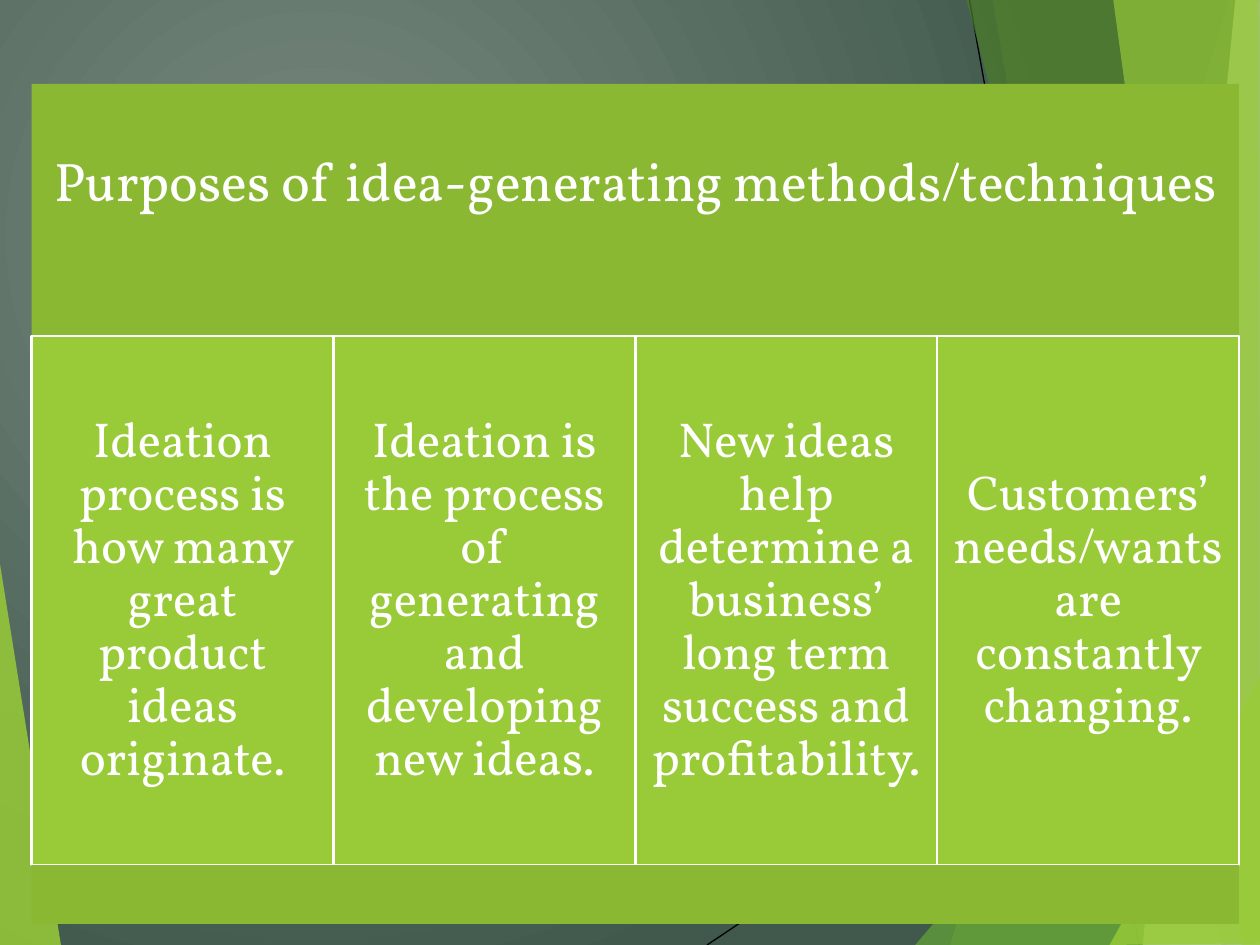
from dataclasses import dataclass

from lxml import etree
from pptx import Presentation
from pptx.dml.color import RGBColor
from pptx.enum.shapes import MSO_CONNECTOR, MSO_SHAPE
from pptx.enum.text import MSO_ANCHOR, MSO_AUTO_SIZE, PP_ALIGN
from pptx.oxml.ns import qn
from pptx.util import Pt

RECT = MSO_SHAPE.RECTANGLE
LINE = MSO_CONNECTOR.STRAIGHT
MIDDLE = MSO_ANCHOR.MIDDLE
CENTER = PP_ALIGN.CENTER
NO_FIT = MSO_AUTO_SIZE.NONE


@dataclass(frozen=True)
class Theme:
    font: str = "Vollkorn"
    head: float = 31
    body: float = 28
    white: str = "FFFFFF"
    black: str = "000000"
    lime: str = "99CB38"
    olive: str = "8BB833"
    leaf: str = "63A537"
    moss: str = "4A7C29"
    pale: str = "C2E088"
    glow: str = "798980"
    dusk: str = "40594C"


@dataclass(frozen=True)
class Box:
    left: float
    top: float
    width: float
    height: float


@dataclass(frozen=True)
class Facet:
    color: str
    alpha: int  # opacity in percent
    points: tuple


THEME = Theme()

# Panel layout
LEFT, WIDTH = 18, 690
HEAD = Box(LEFT, 48, WIDTH, 144)
BODY = Box(LEFT, 192, WIDTH, 302.4)
FOOT = Box(LEFT, 494.4, WIDTH, 33.6)

TITLE = "Purposes of idea-generating methods/techniques"
CARDS = (
    "Ideation process is how many great product ideas originate.",
    "Ideation is the process of generating and developing new ideas.",
    "New ideas help determine a business’ long term success and profitability.",
    "Customers’ needs/wants are constantly changing.",
)

# Backdrop, from back to front
RAYS = (((404, 540), (720, 329)), ((554, 0), (651, 540)))
FACETS = (
    Facet(THEME.lime, 85, ((-1, 316), (35, 541), (-1, 540))),
    Facet(THEME.lime, 30, ((702, 0), (543, 540), (721, 541), (721, 1))),
    Facet(THEME.lime, 20, ((567, -1), (662, 540), (721, 540), (721, -1))),
    Facet(THEME.leaf, 72, ((523, 540), (720, 309), (721, 540))),
    Facet(THEME.moss, 70, ((552, -1), (698, 540), (721, 539), (721, -1))),
    Facet(THEME.pale, 70, ((706, -1), (653, 540), (721, 540), (720, -1))),
    Facet(THEME.lime, 65, ((636, -1), (710, 540), (720, 540), (719, -1))),
    Facet(THEME.lime, 80, ((634, 540), (721, 385), (721, 539))),
)


def rgb(color: str) -> RGBColor:
    return RGBColor.from_string(color)


def paint(shape, color: str) -> None:
    shape.fill.solid()
    shape.fill.fore_color.rgb = rgb(color)


def shade(slide) -> None:
    """Give the slide a radial gradient."""
    fill = slide.background.fill
    fill.gradient()
    for stop, place, color in zip(fill.gradient_stops, (0, 1),
                                  (THEME.glow, THEME.dusk)):
        stop.position = place
        stop.color.rgb = rgb(color)
    grad = slide.element.find(".//" + qn("a:gradFill"))
    grad.remove(grad.find(qn("a:lin")))
    path = etree.SubElement(grad, qn("a:path"), path="circle")
    etree.SubElement(path, qn("a:fillToRect"),
                     l="50000", t="50000", r="100000", b="100000")


def draw_ray(slide, start: tuple, end: tuple) -> None:
    ray = slide.shapes.add_connector(LINE, *map(Pt, start + end))
    ray.line.color.rgb = rgb(THEME.black)
    ray.line.width = Pt(0.75)
    etree.SubElement(ray.element.spPr, qn("a:effectLst"))


def draw_facet(slide, facet: Facet) -> None:
    first, *rest = facet.points
    pen = slide.shapes.build_freeform(*first, scale=Pt(1))
    pen.add_line_segments(rest, close=True)
    shape = pen.convert_to_shape()
    shape.shadow.inherit = False
    paint(shape, facet.color)
    shape.line.fill.background()
    tint = shape.element.spPr.find(".//" + qn("a:srgbClr"))
    etree.SubElement(tint, qn("a:alpha"), val=str(facet.alpha * 1000))


def draw_box(slide, box: Box, color: str):
    shape = slide.shapes.add_shape(
        RECT, Pt(box.left), Pt(box.top), Pt(box.width), Pt(box.height))
    shape.shadow.inherit = False
    paint(shape, color)
    shape.line.fill.background()
    return shape


def write(shape, text: str, size: float, pad: float, space: float) -> None:
    frame = shape.text_frame
    frame.text = text
    frame.word_wrap = True
    frame.auto_size = NO_FIT
    frame.vertical_anchor = MIDDLE
    frame.margin_left = frame.margin_right = Pt(pad)
    frame.margin_top = frame.margin_bottom = Pt(pad)
    para = frame.paragraphs[0]
    para.alignment = CENTER
    para.line_spacing = space
    para.space_before = Pt(0)
    font = para.runs[0].font
    font.name = THEME.font
    font.size = Pt(size)
    font.color.rgb = rgb(THEME.white)


def draw_title(slide) -> None:
    title = slide.shapes.title
    title.left, title.top = Pt(HEAD.left), Pt(HEAD.top)
    title.width, title.height = Pt(HEAD.width), Pt(HEAD.height)
    paint(title, THEME.olive)
    write(title, TITLE, THEME.head, 9, 1)
    title.text_frame.margin_bottom = Pt(43)  # lifts the line above the middle
    title.element.getparent().append(title.element)  # in front of backdrop


def draw_cards(slide) -> None:
    width = BODY.width / len(CARDS)
    for i, text in enumerate(CARDS):
        box = Box(BODY.left + i * width, BODY.top, width, BODY.height)
        card = draw_box(slide, box, THEME.lime)
        card.line.color.rgb = rgb(THEME.white)
        card.line.width = Pt(1.5)
        write(card, text, THEME.body, 8.5, 0.9)


def main() -> None:
    deck = Presentation()
    deck.slide_width, deck.slide_height = Pt(720), Pt(540)
    slide = deck.slides.add_slide(deck.slide_layouts[5])

    # Backdrop
    shade(slide)
    for start, end in RAYS:
        draw_ray(slide, start, end)
    for facet in FACETS:
        draw_facet(slide, facet)

    # Panel
    draw_title(slide)
    draw_cards(slide)
    draw_box(slide, FOOT, THEME.olive)

    deck.save("out.pptx")


if __name__ == "__main__":
    main()
